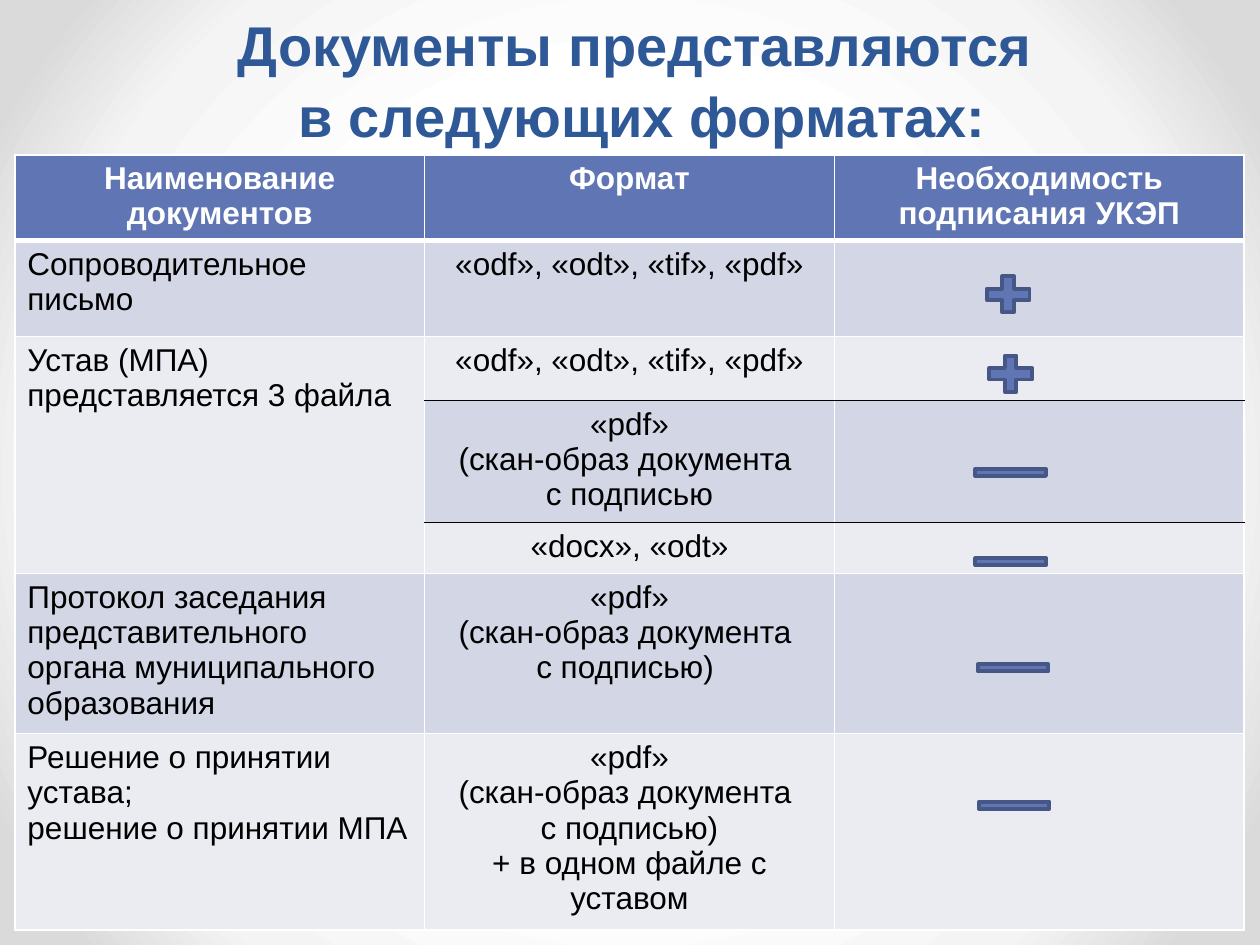
"""Build a slide with a table of document formats and signature marks."""
from dataclasses import dataclass

from lxml.etree import SubElement
from pptx import Presentation
from pptx.dml.color import RGBColor
from pptx.enum.shapes import MSO_SHAPE as Preset
from pptx.enum.text import MSO_ANCHOR as Anchor, MSO_AUTO_SIZE as AutoSize, PP_ALIGN as Align
from pptx.oxml import parse_xml
from pptx.oxml.ns import nsdecls, qn
from pptx.slide import Slide
from pptx.table import Table, _Cell as Cell
from pptx.text.text import _Paragraph as Paragraph
from pptx.util import Cm, Pt

FONT = "Arial"
WHITE, BLACK, ACCENT, OUTLINE = "FFFFFF", "000000", "6076B4", "475785"
BANDS = ("EAECF2", "D2D6E5")
COLUMN_WIDTH = 8.26
PLUS_SIZE, MINUS_SIZE = (1.17, 0.99), (1.93, 0.61)


@dataclass
class Row:
    height: float
    document: tuple[str, ...]
    formats: tuple[str, ...]
    signature: tuple[str, ...] = ()


@dataclass
class Mark:
    preset: Preset
    left: float
    top: float
    size: tuple[float, float]


SCAN = ("«pdf»", "(скан-образ документа ")
EDITABLE = ("«odf», «odt», «tif», «pdf»",)
ROWS = [
    Row(1.73, ("Наименование документов",), ("Формат",), ("Необходимость подписания УКЭП",)),
    Row(1.93, ("Сопроводительное письмо",), EDITABLE),
    Row(1.29, ("Устав (МПА)", "представляется 3 файла"), EDITABLE),
    Row(2.46, (), (*SCAN, "с подписью")),
    Row(0.96, (), ("«docx», «odt»",)),
    Row(3.23, ("Протокол заседания представительного органа муниципального образования",),
        (*SCAN, "с подписью) ")),
    Row(3.96, ("Решение о принятии устава;", "решение о принятии МПА"),
        (*SCAN, "с подписью)", "+ в одном файле с уставом")),
]
CHARTER_FIRST, CHARTER_LAST = 2, 4
MARKS = [
    Mark(Preset.MATH_PLUS, 19.74, 5.44, PLUS_SIZE),
    Mark(Preset.MATH_PLUS, 19.79, 7.04, PLUS_SIZE),
    Mark(Preset.MATH_MINUS, 19.41, 9.22, MINUS_SIZE),
    Mark(Preset.MATH_MINUS, 19.41, 11.02, MINUS_SIZE),
    Mark(Preset.MATH_MINUS, 19.46, 13.16, MINUS_SIZE),
    Mark(Preset.MATH_MINUS, 19.48, 15.93, MINUS_SIZE),
]


def color(value: str) -> RGBColor:
    return RGBColor.from_string(value)


def add_span(para: Paragraph, text: str, size: float, shade: str, bold: bool) -> None:
    span = para.add_run()
    span.text = text
    span.font.name = FONT
    span.font.size = Pt(size)
    span.font.bold = bold
    span.font.color.rgb = color(shade)


def paint_background(slide: Slide) -> None:
    slide.background.fill.gradient()
    stops = "".join(
        f'<a:gs pos="{place * 1000}"><a:srgbClr val="{shade}"/></a:gs>'
        for place, shade in ((50, WHITE), (76, "F4F4F4"), (92, "DADADA"))
    )
    gradient = parse_xml(
        f'<a:gradFill {nsdecls("a")} rotWithShape="1"><a:gsLst>{stops}</a:gsLst>'
        '<a:path path="circle"><a:fillToRect l="50000" t="50000" r="50000" b="50000"/>'
        "</a:path></a:gradFill>"
    )
    old = next(slide.element.iter(qn("a:gradFill")))
    old.getparent().replace(old, gradient)


def write_title(slide: Slide) -> None:
    title = slide.shapes.title
    title.left, title.top, title.width, title.height = Cm(0.51), Cm(0.33), Cm(24.89), Cm(2.79)
    frame = title.text_frame
    frame.auto_size = AutoSize.NONE
    frame.vertical_anchor = Anchor.BOTTOM
    para = frame.paragraphs[0]
    para.alignment = Align.CENTER
    para.line_spacing = 1.05
    add_span(para, "Документы представляются ", 32, "2F5897", True)
    para.add_line_break()
    add_span(para, "в следующих форматах:", 32, "2F5897", True)


def draw_border(cell: Cell, side: str, shade: str, width: float) -> None:
    properties = cell._tc.get_or_add_tcPr()
    line = SubElement(properties, qn(f"a:ln{side}"), w=str(Pt(width)))
    fill = SubElement(line, qn("a:solidFill"))
    SubElement(fill, qn("a:srgbClr"), val=shade)


def format_cell(cell: Cell, row: int, column: int) -> None:
    black_edges = range(CHARTER_FIRST + 1, CHARTER_LAST + 1) if column else ()
    edges = {"T": row, "B": row + 1}
    for side in "LRTB":
        shade = BLACK if edges.get(side) in black_edges else WHITE
        draw_border(cell, side, shade, 3 if edges.get(side) == 1 else 1)
    cell.fill.solid()
    cell.fill.fore_color.rgb = color(BANDS[row % 2] if row else ACCENT)


def write_cell(cell: Cell, lines: tuple[str, ...], header: bool, centered: bool) -> None:
    frame = cell.text_frame
    for index, text in enumerate(lines):
        para = frame.add_paragraph() if index else frame.paragraphs[0]
        para.alignment = Align.CENTER if centered else Align.LEFT
        add_span(para, text, 18, WHITE if header else BLACK, header)


def add_format_table(slide: Slide) -> Table:
    height = sum(row.height for row in ROWS)
    table = slide.shapes.add_table(
        len(ROWS), 3, Cm(0.3), Cm(3.12), Cm(3 * COLUMN_WIDTH), Cm(height)
    ).table
    for column in table.columns:
        column.width = Cm(COLUMN_WIDTH)
    for index, row in enumerate(ROWS):
        table.rows[index].height = Cm(row.height)
        for column, lines in enumerate((row.document, row.formats, row.signature)):
            cell = table.cell(index, column)
            format_cell(cell, index, column)
            write_cell(cell, lines, index == 0, index == 0 or column > 0)
    table.cell(CHARTER_FIRST, 0).merge(table.cell(CHARTER_LAST, 0))
    return table


def add_mark(slide: Slide, mark: Mark) -> None:
    width, height = mark.size
    shape = slide.shapes.add_shape(
        mark.preset, Cm(mark.left), Cm(mark.top), Cm(width), Cm(height)
    )
    shape.shadow.inherit = False
    shape.fill.solid()
    shape.fill.fore_color.rgb = color(ACCENT)
    shape.line.color.rgb = color(OUTLINE)
    shape.line.width = Pt(2.25)


def main() -> None:
    deck = Presentation()
    deck.slide_width, deck.slide_height = Cm(25.4), Cm(19.05)
    page = deck.slides.add_slide(deck.slide_layouts[5])
    paint_background(page)
    write_title(page)
    add_format_table(page)
    for mark in MARKS:
        add_mark(page, mark)
    deck.save("out.pptx")


if __name__ == "__main__":
    main()
